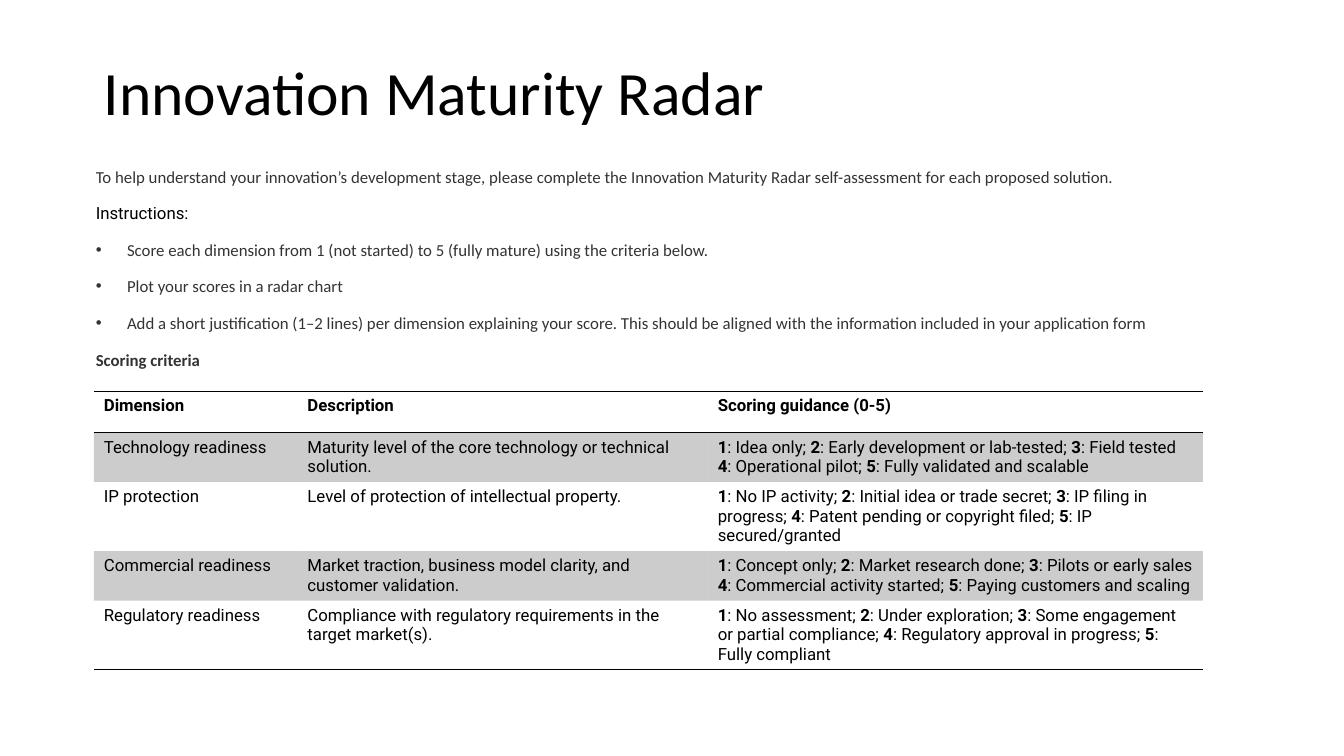
from lxml import etree
from pptx import Presentation
from pptx import util as u
from pptx.dml.color import RGBColor
from pptx.enum import text
from pptx.oxml import ns

PX = 9144
BLACK = RGBColor(0, 0, 0)
CHARCOAL = RGBColor(0x33, 0x33, 0x33)
NO_GRID_STYLE = "{2D5ABB26-0587-4C30-8999-92F81FD0307C}"
TITLE_FONT = {"name": "Calibri", "size": u.Pt(44), "bold": False}
BODY_FONT = {"name": "Calibri", "size": u.Pt(12), "bold": False}
TABLE_FONT = {"name": "Roboto", "size": u.Pt(12), "bold": False}
BULLET_INDENT = 31
COLUMNS = (202, 407, 491)
ROW_HEIGHT = 41
BAND_OPACITY = 20

INSTRUCTIONS = [
    ("To help understand your innovation’s development stage, please complete the Innovation "
     "Maturity Radar self-assessment for each proposed solution.", False, BODY_FONT, CHARCOAL),
    ("Instructions:", False, TABLE_FONT, BLACK),
    ("Score each dimension from 1 (not started) to 5 (fully mature) using the criteria below.",
     True, BODY_FONT, CHARCOAL),
    ("Plot your scores in a radar chart", True, BODY_FONT, CHARCOAL),
    ("Add a short justification (1–2 lines) per dimension explaining your score. This should be "
     "aligned with the information included in your application form", True, BODY_FONT, CHARCOAL),
    ("Scoring criteria", False, {**BODY_FONT, "bold": True}, CHARCOAL),
]
CRITERIA = [
    ("*Dimension*", "*Description*", "*Scoring guidance (0-5)*"),
    ("Technology readiness", "Maturity level of the core technology or technical solution.",
     "*1*: Idea only; *2*: Early development or lab-tested; *3*: Field tested\n"
     "*4*: Operational pilot; *5*: Fully validated and scalable"),
    ("IP protection", "Level of protection of intellectual property.",
     "*1*: No IP activity; *2*: Initial idea or trade secret; *3*: IP filing in progress; "
     "*4*: Patent pending or copyright filed; *5*: IP secured/granted"),
    ("Commercial readiness", "Market traction, business model clarity, and customer validation.",
     "*1*: Concept only; *2*: Market research done; *3*: Pilots or early sales\n"
     "*4*: Commercial activity started; *5*: Paying customers and scaling"),
    ("Regulatory readiness", "Compliance with regulatory requirements in the target market(s).",
     "*1*: No assessment; *2*: Under exploration; *3*: Some engagement or partial compliance; "
     "*4*: Regulatory approval in progress; *5*: Fully compliant"),
]


def px(*lengths):
    return [u.Emu(length * PX) for length in lengths]


def apply(target, values):
    for name, value in values.items():
        setattr(target, name, value)


def add_span(para, words, font, color):
    span = para.add_run()
    span.text = words
    apply(span.font, font)
    span.font.color.rgb = color


def place(shape, box, anchor):
    apply(shape, dict(zip(("left", "top", "width", "height"), px(*box))))
    apply(shape.text_frame, {"word_wrap": True, "vertical_anchor": anchor,
                             "auto_size": text.MSO_AUTO_SIZE.NONE})


def set_bullet(para, bulleted):
    props = para._p.get_or_add_pPr()
    indent = BULLET_INDENT * PX if bulleted else 0
    props.set("marL", str(indent))
    props.set("indent", str(-indent))
    if bulleted:
        font = etree.SubElement(props, ns.qn("a:buFont"))
        font.set("typeface", "Arial")
        etree.SubElement(props, ns.qn("a:buChar")).set("char", "•")
    else:
        etree.SubElement(props, ns.qn("a:buNone"))


def fill_title(title, box):
    place(title, box, text.MSO_ANCHOR.MIDDLE)
    para = title.text_frame.paragraphs[0]
    apply(para, {"alignment": text.PP_ALIGN.LEFT, "line_spacing": 0.9})
    add_span(para, "Innovation Maturity Radar", TITLE_FONT, BLACK)


def fill_instructions(body, box):
    place(body, box, text.MSO_ANCHOR.TOP)
    frame = body.text_frame
    for index, (words, bulleted, font, color) in enumerate(INSTRUCTIONS):
        para = frame.add_paragraph() if index else frame.paragraphs[0]
        set_bullet(para, bulleted)
        apply(para, {"line_spacing": 1.15, "space_after": u.Pt(4.8),
                     "space_before": u.Pt(4.8 if index else 0)})
        add_span(para, words, font, color)


def write_cell(cell, marked):
    para = cell.text_frame.paragraphs[0]
    for number, line in enumerate(marked.split("\n")):
        if number:
            para.add_line_break()
        for index, words in enumerate(line.split("*")):
            if words:
                add_span(para, words, {**TABLE_FONT, "bold": index % 2 == 1}, BLACK)


def add_rule(cell, side):
    rule = etree.SubElement(cell._tc.get_or_add_tcPr(), ns.qn(f"a:{side}"))
    rule.set("w", str(u.Pt(1)))
    fill = etree.SubElement(rule, ns.qn("a:solidFill"))
    etree.SubElement(fill, ns.qn("a:srgbClr")).set("val", str(BLACK))


def shade_cell(cell, banded):
    if not banded:
        cell.fill.background()
        return
    cell.fill.solid()
    cell.fill.fore_color.rgb = BLACK
    color = cell._tc.tcPr.find(".//" + ns.qn("a:solidFill") + "[last()]/../"
                               + ns.qn("a:solidFill") + "/" + ns.qn("a:srgbClr"))
    etree.SubElement(color, ns.qn("a:alpha")).set("val", str(BAND_OPACITY * 1000))


def add_criteria(page, left, top):
    size = px(left, top, sum(COLUMNS), ROW_HEIGHT * len(CRITERIA))
    table = page.shapes.add_table(len(CRITERIA), len(COLUMNS), *size).table
    apply(table, {"first_row": False, "horz_banding": False})
    table._tbl.tblPr.find(ns.qn("a:tableStyleId")).text = NO_GRID_STYLE
    for column, width in zip(table.columns, px(*COLUMNS)):
        column.width = width
    last = len(CRITERIA) - 1
    for index, entries in enumerate(CRITERIA):
        table.rows[index].height = px(ROW_HEIGHT)[0]
        for cell, marked in zip(table.rows[index].cells, entries):
            write_cell(cell, marked)
            if index == 0:
                add_rule(cell, "lnT")
            if index in (0, last):
                add_rule(cell, "lnB")
            shade_cell(cell, index % 2 == 1)


def main():
    deck = Presentation()
    deck.slide_width, deck.slide_height = px(1333, 750)
    page = deck.slides.add_slide(deck.slide_layouts[1])
    fill_title(page.shapes.title, (93, 22, 1150, 145))
    fill_instructions(page.placeholders[1], (85, 157, 1116, 218))
    add_criteria(page, 93, 388)
    deck.save("out.pptx")


if __name__ == "__main__":
    main()
